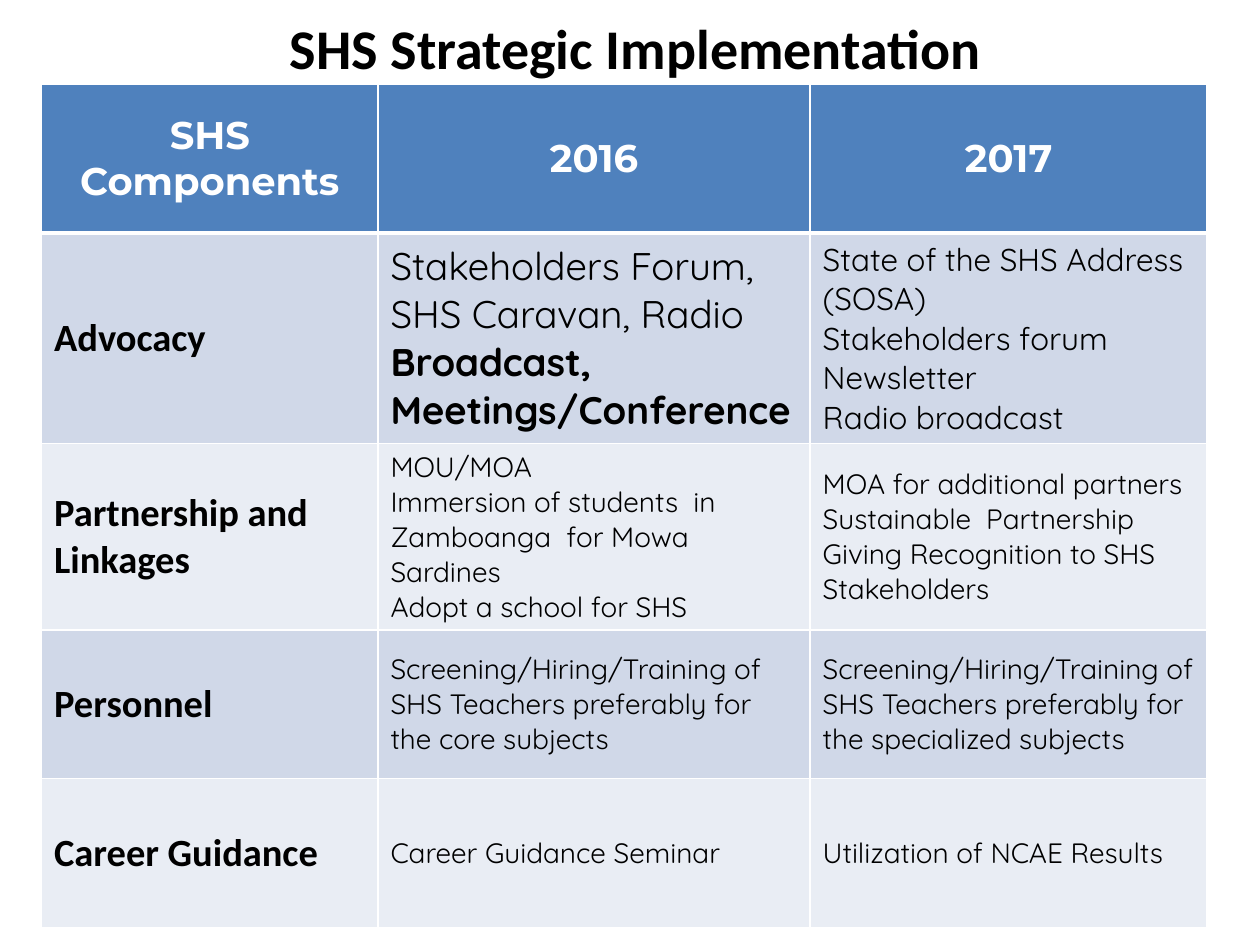
from lxml.etree import SubElement
from pptx import Presentation
from pptx.dml.color import RGBColor
from pptx.enum.text import MSO_ANCHOR as Anchor, PP_ALIGN as Align
from pptx.oxml.ns import qn
from pptx.util import Inches, Pt

BLACK, WHITE, HEADER_BLUE = "000000", "FFFFFF", "4F81BD"
BANDS = ("D0D8E8", "E9EDF4")
COLUMN_WIDTHS = (2.67, 3.43, 3.15)
ROW_HEIGHTS = (1.18, 1.67, 1.48, 1.18, 1.18)

TITLE = {"name": "Calibri", "size": Pt(32), "bold": True}
HEADING = {"name": "Montserrat", "size": Pt(22), "bold": True}
COMPONENT = {"name": "Calibri", "size": Pt(22), "bold": True}
LARGE = {"name": "Quicksand", "size": Pt(22), "bold": False}
STRONG = {**LARGE, "bold": True}
MEDIUM = {**LARGE, "size": Pt(18)}
SMALL = {**LARGE, "size": Pt(16)}

HEADINGS = ("SHS Components", "2016", "2017")
PLANS = (
    ("Advocacy",
     [[("Stakeholders Forum, SHS Caravan, Radio ", LARGE),
       ("Broadcast, Meetings/Conference", STRONG)]],
     [[(line, MEDIUM)] for line in (
         "State of the SHS Address (SOSA)", "Stakeholders forum",
         "Newsletter", "Radio broadcast")]),
    ("Partnership and Linkages",
     [[(line, SMALL)] for line in (
         "MOU/MOA",
         "Immersion of students  in Zamboanga  for Mowa Sardines",
         "Adopt a school for SHS")],
     [[(line, SMALL)] for line in (
         "MOA for additional partners", "Sustainable  Partnership",
         "Giving Recognition to SHS Stakeholders")]),
    ("Personnel",
     [[("Screening/Hiring/Training of SHS Teachers preferably for "
        "the core subjects", SMALL)]],
     [[("Screening/Hiring/Training of SHS Teachers preferably for "
        "the specialized subjects", SMALL)]]),
    ("Career Guidance",
     [[("Career Guidance Seminar", SMALL)]],
     [[("Utilization of NCAE Results", SMALL)]]),
)


def rgb(value):
    """Turn a hex string into a colour."""
    return RGBColor.from_string(value)


def write(frame, paragraphs, color=BLACK, align=Align.LEFT):
    """Fill a text frame with paragraphs of (text, format) runs."""
    for index, runs in enumerate(paragraphs):
        paragraph = frame.paragraphs[0] if index == 0 else frame.add_paragraph()
        paragraph.alignment = align
        for text, style in runs:
            run = paragraph.add_run()
            run.text = text
            run.font.color.rgb = rgb(color)
            for key, value in style.items():
                setattr(run.font, key, value)


def set_borders(cell, top, bottom):
    """Draw white borders with the given top and bottom widths in points."""
    properties = cell._tc.get_or_add_tcPr()
    for side, width in (("L", 1), ("R", 1), ("T", top), ("B", bottom)):
        line = SubElement(properties, qn(f"a:ln{side}"), w=str(Pt(width)))
        fill = SubElement(line, qn("a:solidFill"))
        SubElement(fill, qn("a:srgbClr"), val=WHITE)


def style_cell(cell, row, fill):
    """Give a cell its borders, fill and vertical anchor."""
    set_borders(cell, 3 if row == 1 else 1, 3 if row == 0 else 1)
    cell.fill.solid()
    cell.fill.fore_color.rgb = rgb(fill)
    cell.vertical_anchor = Anchor.MIDDLE


def add_title(slide, left, top, width, height):
    """Place the centred slide title in the box."""
    title = slide.shapes.add_textbox(left, top, width, height).text_frame
    title.word_wrap = True
    title.vertical_anchor = Anchor.MIDDLE
    write(title, [[("SHS Strategic Implementation", TITLE)]], align=Align.CENTER)


def add_plan_table(slide, left, top, width, height):
    """Place the table of components by year, scaled to the box."""
    plan = slide.shapes.add_table(
        len(ROW_HEIGHTS), len(COLUMN_WIDTHS), left, top, width, height).table
    for column, share in zip(plan.columns, COLUMN_WIDTHS):
        column.width = int(width * share / sum(COLUMN_WIDTHS))
    for row, share in zip(plan.rows, ROW_HEIGHTS):
        row.height = int(height * share / sum(ROW_HEIGHTS))

    for column, heading in enumerate(HEADINGS):
        cell = plan.cell(0, column)
        style_cell(cell, 0, HEADER_BLUE)
        write(cell.text_frame, [[(heading, HEADING)]], WHITE, Align.CENTER)
    for row, (component, *years) in enumerate(PLANS, start=1):
        contents = ([[(component, COMPONENT)]], *years)
        for column, paragraphs in enumerate(contents):
            cell = plan.cell(row, column)
            style_cell(cell, row, BANDS[(row - 1) % 2])
            write(cell.text_frame, paragraphs)


def main():
    """Build and save the slide."""
    deck = Presentation()
    deck.slide_width, deck.slide_height = Inches(10), Inches(7.5)
    slide = deck.slides.add_slide(deck.slide_layouts[6])
    add_title(slide, Inches(0.75), Inches(-0.09), Inches(8.59), Inches(0.92))
    add_plan_table(slide, Inches(0.33), Inches(0.67),
                   Inches(sum(COLUMN_WIDTHS)), Inches(sum(ROW_HEIGHTS)))
    deck.save("out.pptx")


if __name__ == "__main__":
    main()
